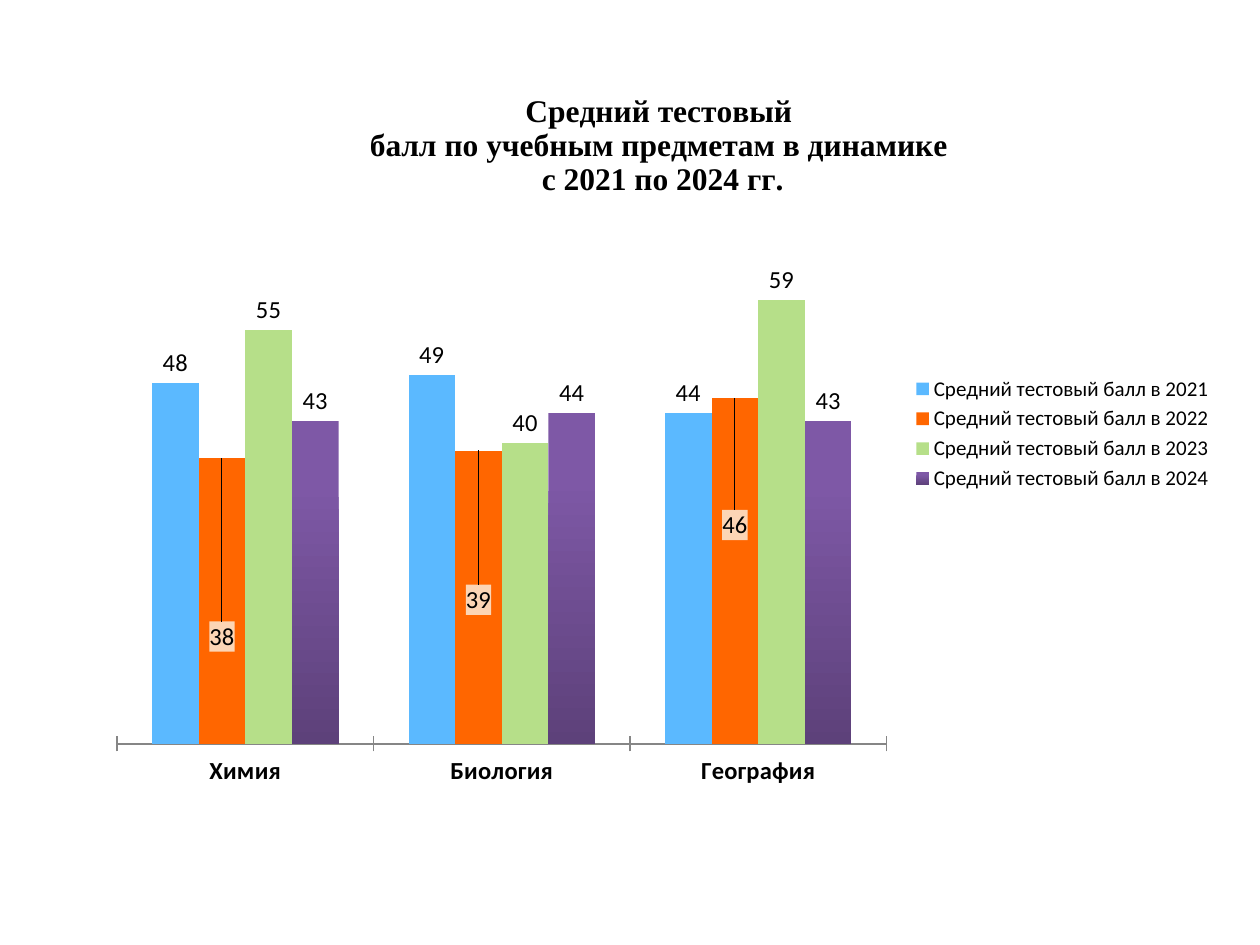
"""Build a slide with a column chart of average test scores by subject, 2021 to 2024."""
from dataclasses import dataclass
from typing import Any

from lxml.etree import SubElement
from pptx import Presentation
from pptx.chart.data import CategoryChartData as ChartData
from pptx.dml.color import RGBColor as RGB
from pptx.enum.chart import XL_CHART_TYPE as CT
from pptx.enum.chart import XL_LABEL_POSITION as LP
from pptx.enum.chart import XL_LEGEND_POSITION as LEG
from pptx.enum.chart import XL_TICK_LABEL_POSITION as TLP
from pptx.enum.chart import XL_TICK_MARK as TM
from pptx.oxml import parse_xml
from pptx.oxml.ns import nsdecls, qn
from pptx.util import Inches, Pt

COLORS = {
    "text": "000000", "axis": "868686", "label": "FCD5B5",
    "2021": "5BB9FF", "2022": "FF6600", "2023": "B6DF89",
    "2024": "7E58A6", "2024 base": "5D417A",
}
WIDTH, HEIGHT = 10, 7.5
CHART_BOX = (0.075, 0.07, 0.898, 0.778)
PLOT_BOX = {"x": 0.02, "y": 0.206, "w": 0.68, "h": 0.716}
TITLE_SPOT = {"x": 0.24, "y": 0.03}
SUBJECTS = ("Химия", "Биология", "География")
TITLE = (
    "Средний тестовый ",
    "балл по учебным предметам в динамике ",
    "с 2021 по 2024 гг.",
)


@dataclass(frozen=True)
class Year:
    """Scores of one year, with the downward shift of each label."""

    year: str
    scores: tuple[int, ...]
    label_shifts: tuple[float, ...] = ()

    @property
    def name(self) -> str:
        """Return the legend entry."""
        return f"Средний тестовый балл в {self.year}"


YEARS = (
    Year("2021", (48, 49, 44)),
    Year("2022", (38, 39, 46), (0.27, 0.23, 0.2)),
    Year("2023", (55, 40, 59)),
    Year("2024", (43, 44, 43)),
)


def rgb(key: str) -> RGB:
    """Return a named colour."""
    return RGB.from_string(COLORS[key])


def apply(obj: Any, **values: Any) -> None:
    """Set several attributes of an object."""
    for key, value in values.items():
        setattr(obj, key, value)


def set_font(font: Any, size: int, bold: bool = False, name: str = "Calibri") -> None:
    """Format a chart font."""
    apply(font, size=Pt(size), bold=bold, name=name)
    font.color.rgb = rgb("text")


def make_layout(shares: dict[str, float], edge: bool = True, inner: bool = False) -> Any:
    """Return a manual layout given in shares of the chart."""
    layout = parse_xml(f"<c:layout {nsdecls('c')}/>")
    manual = SubElement(layout, qn("c:manualLayout"))
    tags = [("layoutTarget", "inner")] if inner else []
    if edge:
        tags += [("xMode", "edge"), ("yMode", "edge")]
    for tag, value in tags + list(shares.items()):
        SubElement(manual, qn(f"c:{tag}")).set("val", str(value))
    return layout


def place(parent: Any, layout: Any, before: str) -> None:
    """Put a layout in front of the named child, replacing any existing one."""
    for old in parent.findall(qn("c:layout")):
        parent.remove(old)
    parent.find(qn(before)).addprevious(layout)


def shift_label(point: Any, s: Any, index: int, shift: float) -> None:
    """Move one data label down and give it a tinted box."""
    set_font(point.data_label.font, 14)
    point.data_label.position = LP.OUTSIDE_END
    label = s._element.xpath(f".//c:dLbl[c:idx/@val='{index}']")[0]
    for old in label.findall(qn("c:spPr")):
        label.remove(old)
    box = parse_xml(
        f'<c:spPr {nsdecls("c", "a")}><a:solidFill>'
        f'<a:srgbClr val="{COLORS["label"]}"/></a:solidFill></c:spPr>'
    )
    idx = label.find(qn("c:idx"))
    idx.addnext(box)
    idx.addnext(make_layout({"x": 0, "y": shift}, edge=False))


def format_series(s: Any, year: Year) -> None:
    """Colour one series and label its columns."""
    fill = s.format.fill
    base = f"{year.year} base"
    if base in COLORS:
        fill.gradient()
        fill.gradient_angle = 270
        for stop, key, pos in zip(fill.gradient_stops, (year.year, base), (0.2, 1)):
            stop.color.rgb = rgb(key)
            stop.position = pos
    else:
        fill.solid()
        fill.fore_color.rgb = rgb(year.year)
    s.invert_if_negative = False
    apply(s.data_labels, show_value=True, position=LP.OUTSIDE_END)
    set_font(s.data_labels.font, 14)
    for i, shift in enumerate(year.label_shifts):
        shift_label(s.points[i], s, i, shift)


def format_title(chart: Any) -> None:
    """Write the three-line chart title."""
    chart.has_title = True
    tf = chart.chart_title.text_frame
    for i, line in enumerate(TITLE):
        p = tf.paragraphs[0] if i == 0 else tf.add_paragraph()
        r = p.add_run()
        r.text = line
        set_font(r.font, 18, True, "Times New Roman")
    place(chart.chart_title._element, make_layout(TITLE_SPOT), "c:overlay")


def format_axes(chart: Any) -> None:
    """Show the subject axis and hide the score axis."""
    cat, val = chart.category_axis, chart.value_axis
    apply(cat, major_tick_mark=TM.CROSS, tick_label_position=TLP.NEXT_TO_AXIS,
          has_major_gridlines=False)
    cat.format.line.color.rgb = rgb("axis")
    set_font(cat.tick_labels.font, 14, True)
    apply(val, visible=False, has_major_gridlines=False,
          minimum_scale=0, maximum_scale=70)


def add_score_chart(slide: Any) -> None:
    """Add the clustered column chart."""
    data = ChartData()
    data.categories = SUBJECTS
    for year in YEARS:
        data.add_series(year.name, year.scores)
    x, y, w, h = CHART_BOX
    box = (Inches(x * WIDTH), Inches(y * HEIGHT), Inches(w * WIDTH), Inches(h * HEIGHT))
    chart = slide.shapes.add_chart(CT.COLUMN_CLUSTERED, *box, data).chart
    set_font(chart.font, 10)
    plot = chart.plots[0]
    apply(plot, gap_width=150, overlap=0, vary_by_categories=False)
    for s, year in zip(plot.series, YEARS):
        format_series(s, year)
    format_title(chart)
    format_axes(chart)
    chart.has_legend = True
    apply(chart.legend, position=LEG.RIGHT, include_in_layout=False)
    set_font(chart.legend.font, 12)
    area = chart._chartSpace.chart.plotArea
    place(area, make_layout(PLOT_BOX, inner=True), "c:barChart")


def main() -> None:
    """Create and save the presentation."""
    prs = Presentation()
    apply(prs, slide_width=Inches(WIDTH), slide_height=Inches(HEIGHT))
    add_score_chart(prs.slides.add_slide(prs.slide_layouts[6]))
    prs.save("out.pptx")


if __name__ == "__main__":
    main()
